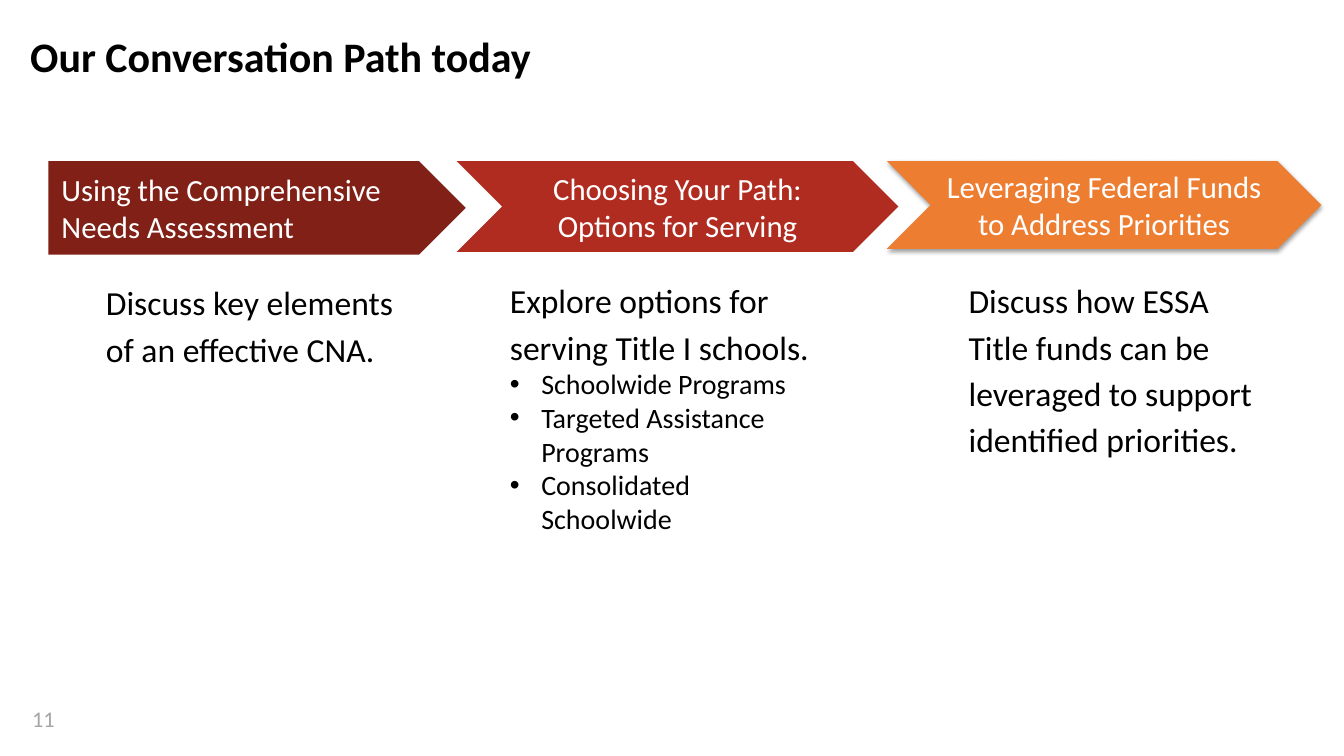
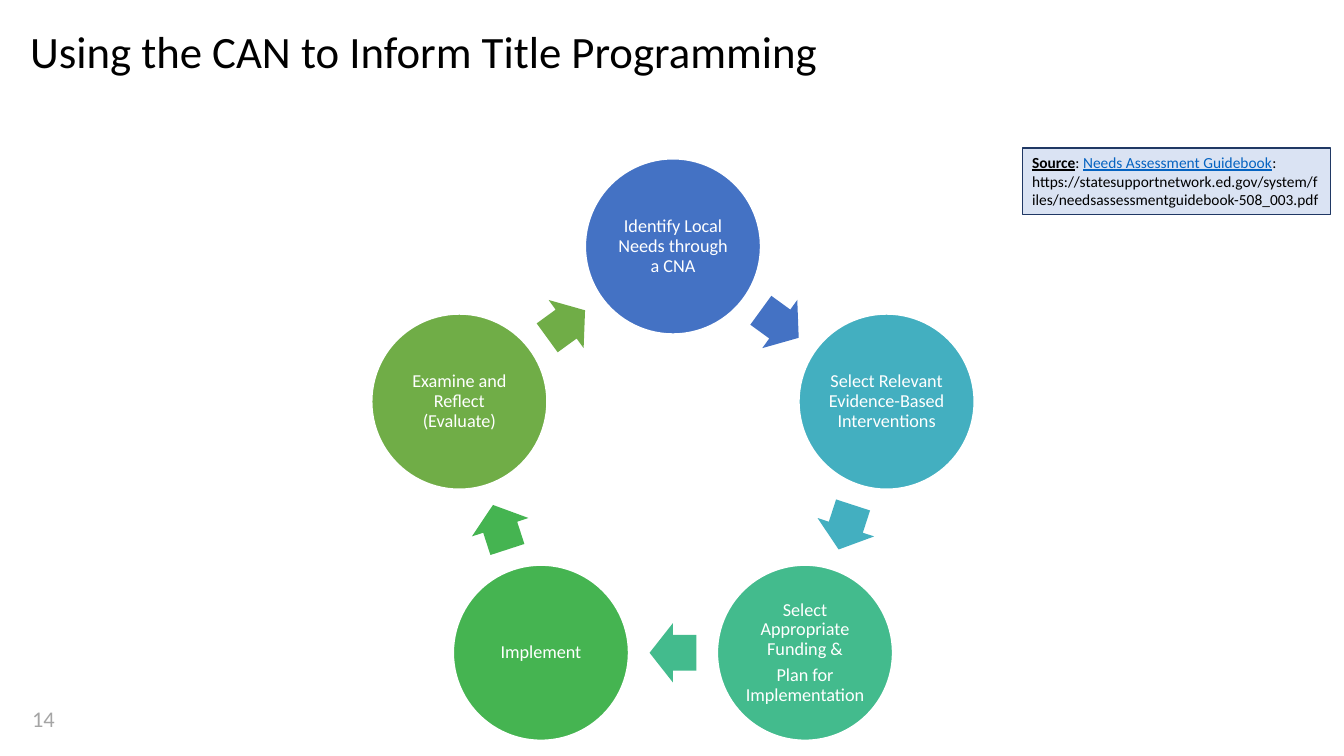
"""Build two slides: a three-step conversation path and a needs assessment cycle."""
from math import cos, pi, sin

from lxml.etree import SubElement
from pptx import Presentation
from pptx.dml.color import RGBColor
from pptx.enum.shapes import MSO_SHAPE
from pptx.enum.text import MSO_ANCHOR, MSO_AUTO_SIZE, PP_ALIGN
from pptx.oxml.ns import qn
from pptx.util import Cm, Pt

FONT = "Calibri"
COLORS = {
    "text": "000000", "white": "FFFFFF", "number": "A5A5A5", "link": "0563C1",
    "maroon": "802017", "red": "B02C20", "orange": "ED7D31",
    "blue": "4472C4", "teal": "43AFC0", "mint": "43BB8D",
    "green": "45B451", "olive": "70AD47",
    "source fill": "DAE3F3", "source line": "203864",
}

PATH_TITLE = "Our Conversation Path today"
BAND_TOP = 4.06
STEPS = [
    {"heading": "Using the Comprehensive Needs Assessment",
     "outline": MSO_SHAPE.PENTAGON, "color": "maroon", "align": PP_ALIGN.LEFT,
     "band": (1.22, 10.52, 2.36), "detail": (2.34, 6.63, 8.26, 9.53),
     "lead": "Discuss key elements of an effective CNA.", "options": []},
    {"heading": "Choosing Your Path: Options for Serving",
     "outline": MSO_SHAPE.CHEVRON, "color": "red", "align": PP_ALIGN.CENTER,
     "band": (11.51, 11.13, 2.29), "detail": (12.52, 6.58, 8.33, 8.94),
     "lead": "Explore options for serving Title I schools.",
     "options": ["Schoolwide Programs", "Targeted Assistance Programs",
                 "Consolidated Schoolwide"]},
    {"heading": "Leveraging Federal Funds to Address Priorities",
     "outline": MSO_SHAPE.CHEVRON, "color": "orange", "align": PP_ALIGN.CENTER,
     "band": (22.35, 10.95, 2.21), "detail": (24.08, 6.58, 8.03, 8.61),
     "lead": "Discuss how ESSA Title funds can be leveraged to support "
             "identified priorities.", "options": [], "shadow": True},
]

CYCLE_TITLE = "Using the CAN to Inform Title Programming"
STAGES = [
    (["Identify Local Needs through a CNA"], "blue"),
    (["Select Relevant Evidence-Based Interventions"], "teal"),
    (["Select Appropriate Funding &", "Plan for Implementation"], "mint"),
    (["Implement"], "green"),
    (["Examine and Reflect (Evaluate)"], "olive"),
]
CENTER_X, CENTER_Y, RADIUS = 16.96, 11.87, 5.66
CIRCLE = 4.45
ARROW_WIDTH, ARROW_HEIGHT = 1.18, 1.5
SOURCE = [
    ("Source", "text", True, True),
    (": ", "text", False, False),
    ("Needs Assessment Guidebook", "link", False, True),
    (": https://statesupportnetwork.ed.gov/system/files/"
     "needsassessmentguidebook-508_003.pdf", "text", False, False),
]


def rgb(name):
    return RGBColor.from_string(COLORS[name])


def style_run(run, size, color, bold=False, underline=False):
    font = run.font
    font.name, font.size = FONT, Pt(size)
    font.bold, font.underline = bold, underline
    font.color.rgb = rgb(color)


def style_paragraph(paragraph, size, color, align=PP_ALIGN.LEFT, spacing=1.0, bold=False):
    paragraph.alignment = align
    paragraph.line_spacing = spacing
    paragraph.space_before = Pt(0)
    for run in paragraph.runs:
        style_run(run, size, color, bold)


def set_frame(frame, across, down, anchor=MSO_ANCHOR.TOP):
    frame.word_wrap = True
    frame.auto_size = MSO_AUTO_SIZE.NONE
    frame.vertical_anchor = anchor
    frame.margin_left = frame.margin_right = Cm(across)
    frame.margin_top = frame.margin_bottom = Cm(down)


def place(shape, left, top, width, height):
    shape.left, shape.top = Cm(left), Cm(top)
    shape.width, shape.height = Cm(width), Cm(height)


def add_figure(slide, outline, box, fill, line=None, line_width=0):
    figure = slide.shapes.add_shape(outline, *map(Cm, box))
    figure.shadow.inherit = False
    figure.fill.solid()
    figure.fill.fore_color.rgb = rgb(fill)
    if line:
        figure.line.color.rgb = rgb(line)
        figure.line.width = Pt(line_width)
    else:
        figure.line.fill.background()
    return figure


def add_shadow(figure):
    effects = figure._element.spPr.find(qn("a:effectLst"))
    shadow = SubElement(effects, qn("a:outerShdw"), blurRad="40000", dist="20000",
                        dir="5400000", rotWithShape="0")
    tint = SubElement(shadow, qn("a:srgbClr"), val=COLORS["text"])
    SubElement(tint, qn("a:alpha"), val="38000")


def set_bullet(paragraph, bulleted):
    properties = paragraph._p.get_or_add_pPr()
    indent = Cm(0.79) if bulleted else 0
    properties.set("marL", str(indent))
    properties.set("indent", str(-indent))
    if bulleted:
        SubElement(properties, qn("a:buFont"), typeface="Arial")
        SubElement(properties, qn("a:buChar"), char="•")
    else:
        SubElement(properties, qn("a:buNone"))


def start_slide(deck, layout, title, size, width, number, bold=False, spacing=1.0):
    slide = deck.slides.add_slide(deck.slide_layouts[layout])
    heading = slide.shapes.title
    place(heading, 0.76, 0.76, width, 1.98)
    heading.text_frame.text = title
    set_frame(heading.text_frame, 0, 0)
    style_paragraph(heading.text_frame.paragraphs[0], size, "text",
                    spacing=spacing, bold=bold)
    page = slide.shapes.add_textbox(Cm(0.23), Cm(17.65), Cm(1.73), Cm(1.02)).text_frame
    page.text = number
    set_frame(page, 0.25, 0.13)
    style_paragraph(page.paragraphs[0], 16, "number", PP_ALIGN.CENTER)
    return slide


def add_step(slide, step):
    left, width, height = step["band"]
    band = add_figure(slide, step["outline"], (left, BAND_TOP, width, height), step["color"])
    if step.get("shadow"):
        add_shadow(band)
    band.text_frame.text = step["heading"]
    set_frame(band.text_frame, 0.33, 0.33, MSO_ANCHOR.MIDDLE)
    style_paragraph(band.text_frame.paragraphs[0], 22, "white", step["align"])

    options = step["options"]
    detail = slide.placeholders[1] if options else slide.shapes.add_textbox(0, 0, 0, 0)
    place(detail, *step["detail"])
    frame = detail.text_frame
    frame.text = "\n".join([step["lead"]] + options)
    set_frame(frame, 0.33, 0.33)
    for position, paragraph in enumerate(frame.paragraphs):
        is_option = position > 0
        set_bullet(paragraph, is_option)
        style_paragraph(paragraph, 20 if is_option else 24, "text",
                        spacing=1.0 if is_option else 1.15)


def ring_box(angle, radius, width, height):
    return (CENTER_X + radius * sin(angle) - width / 2,
            CENTER_Y - radius * cos(angle) - height / 2, width, height)


def add_stage(slide, position, lines, color):
    step = 2 * pi / len(STAGES)
    angle = position * step
    circle = add_figure(slide, MSO_SHAPE.OVAL, ring_box(angle, RADIUS, CIRCLE, CIRCLE),
                        color, "white", 2)
    circle.text_frame.text = "\n".join(lines)
    set_frame(circle.text_frame, 0.05, 0.05, MSO_ANCHOR.MIDDLE)
    for paragraph in circle.text_frame.paragraphs:
        style_paragraph(paragraph, 13, "white", PP_ALIGN.CENTER, 0.9)
        paragraph.space_after = Pt(4.55)

    arrow_box = ring_box(angle + step / 2, RADIUS * cos(step / 2),
                         ARROW_WIDTH, ARROW_HEIGHT)
    arrow = add_figure(slide, MSO_SHAPE.RIGHT_ARROW, arrow_box, color)
    arrow.adjustments[0], arrow.adjustments[1] = 0.6, 0.5
    arrow.rotation = (position + 0.5) * 360 / len(STAGES)


def add_source(slide):
    box = add_figure(slide, MSO_SHAPE.RECTANGLE, (25.76, 3.73, 7.77, 1.68),
                     "source fill", "source line", 0.75)
    set_frame(box.text_frame, 0.25, 0.13)
    citation = box.text_frame.paragraphs[0]
    citation.alignment = PP_ALIGN.LEFT
    for text, color, bold, underline in SOURCE:
        run = citation.add_run()
        run.text = text
        style_run(run, 11, color, bold, underline)


def main():
    deck = Presentation()
    deck.slide_width, deck.slide_height = Cm(33.87), Cm(19.05)

    path_slide = start_slide(deck, 1, PATH_TITLE, 30, 20.6, "11", bold=True)
    for step in STEPS:
        add_step(path_slide, step)

    cycle_slide = start_slide(deck, 5, CYCLE_TITLE, 32, 30.91, "14", spacing=0.9)
    for position, (lines, color) in enumerate(STAGES):
        add_stage(cycle_slide, position, lines, color)
    add_source(cycle_slide)

    deck.save("out.pptx")


if __name__ == "__main__":
    main()
